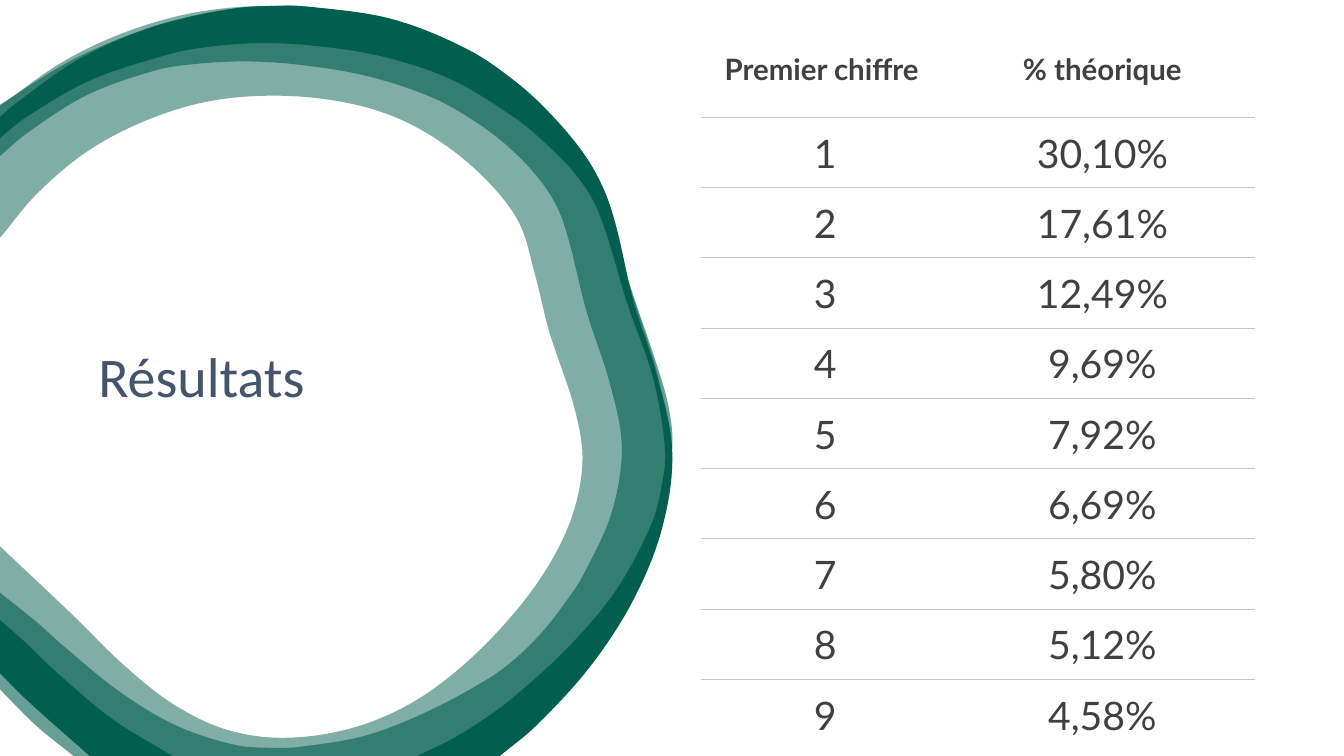
from itertools import islice
from math import dist

from lxml import etree
from pptx import Presentation
from pptx.dml.color import RGBColor
from pptx.enum.shapes import MSO_SHAPE
from pptx.enum.text import MSO_ANCHOR, PP_ALIGN
from pptx.oxml.ns import qn
from pptx.util import Cm, Pt

RECT = MSO_SHAPE.RECTANGLE
CENTER, LEFT = PP_ALIGN.CENTER, PP_ALIGN.LEFT
TOP, MIDDLE, BOTTOM = MSO_ANCHOR.TOP, MSO_ANCHOR.MIDDLE, MSO_ANCHOR.BOTTOM
COLORS = {"white": "FFFFFF", "green": "025E4F", "title": "44546A",
          "text": "404040", "rule": "C7C6C1"}
CM_PER_INCH = 2.54

WIDE_RING = [[
    [(0, 1.04), (0.69, 0.61), (1.41, 0.3), (1.99, 0.14), (2.38, 0.08),
     (2.68, 0.06), (2.98, 0.06), (3.78, 0.18), (4.53, 0.48), (4.87, 0.7),
     (5.17, 0.95), (5.46, 1.23), (5.72, 1.53), (5.94, 1.88), (6.05, 2.16),
     (6.18, 2.61), (6.29, 2.95), (6.52, 3.63), (6.63, 4.02), (6.67, 4.43),
     (6.53, 5.22), (6.19, 5.93), (5.71, 6.54), (5.2, 7.12), (4.8, 7.5)],
    [(0.73, 7.5), (0.36, 7.2), (0, 6.84)],
    [(0, 5.88), (0.35, 6.16), (0.62, 6.4), (1.17, 6.85), (1.73, 7.19),
     (2.33, 7.39), (2.72, 7.42), (2.97, 7.41), (3.62, 7.3), (4.24, 7.06),
     (4.85, 6.73), (5.13, 6.52), (5.38, 6.27), (5.6, 5.99), (5.79, 5.7),
     (6.07, 5.08), (6.17, 4.43), (6.05, 3.8), (5.82, 3.09), (5.64, 2.37),
     (5.53, 2.06), (5.36, 1.79), (5.07, 1.48), (4.72, 1.21), (4.27, 0.96),
     (3.62, 0.75), (2.94, 0.64), (2.41, 0.61), (1.89, 0.64), (1.54, 0.7),
     (0.87, 0.94), (0.27, 1.32), (0, 1.55)],
]]
PALE_RING = [[
    [(0, 1.05), (0.63, 0.61), (1.27, 0.31), (1.96, 0.12), (2.69, 0.06),
     (3.5, 0.13), (4.23, 0.33), (4.88, 0.67), (5.47, 1.17), (5.88, 1.68),
     (6.08, 2.18), (6.24, 2.81), (6.53, 3.74), (6.67, 4.58), (6.52, 5.37),
     (6.18, 6.09), (5.73, 6.71), (4.89, 7.5)],
    [(0.92, 7.5), (0.68, 7.3), (0, 6.64)],
    [(0, 5.42), (0.73, 6.11), (1.23, 6.6), (1.71, 6.98), (2.22, 7.23),
     (2.78, 7.32), (3.43, 7.24), (4.02, 7.01), (4.55, 6.64), (5.07, 6.12),
     (5.45, 5.6), (5.69, 5.08), (5.78, 4.55), (5.7, 4.05), (5.45, 3.29),
     (5.31, 2.73), (5.15, 2.21), (4.84, 1.8), (4.39, 1.42), (3.89, 1.15),
     (3.33, 1), (2.69, 0.95), (2.05, 1.01), (1.44, 1.2), (0.87, 1.5),
     (0.37, 1.92), (0, 2.36)],
]]
DARK_RING = [
    [[(0, 1.16), (0.14, 1.04), (0.78, 0.59), (1.51, 0.27), (2.29, 0.09),
      (2.69, 0.06), (3.09, 0.07), (3.89, 0.19), (4.64, 0.49), (5.14, 0.83),
      (5.5, 1.17), (5.81, 1.55), (6, 1.9), (6.12, 2.27), (6.29, 3.01),
      (6.52, 3.73), (6.67, 4.48), (6.57, 5.24), (6.28, 5.96), (5.85, 6.62),
      (5.32, 7.2), (4.96, 7.5)],
     [(4.14, 7.5), (4.47, 7.34), (4.78, 7.15), (5.08, 6.93), (5.63, 6.43),
      (6.11, 5.86), (6.46, 5.21), (6.56, 4.85), (6.6, 4.48), (6.48, 3.75),
      (6.23, 3.03), (6.01, 2.3), (5.87, 1.96), (5.66, 1.67), (5.4, 1.41),
      (5.11, 1.17), (4.48, 0.79), (3.79, 0.56), (3.07, 0.45), (2.51, 0.43),
      (1.96, 0.48), (1.6, 0.56), (0.89, 0.8), (0.25, 1.17), (0, 1.37)]],
    [[(0, 6.15), (0.27, 6.39), (0.54, 6.65), (1.11, 7.13), (1.71, 7.5)],
     [(0.89, 7.5), (0.26, 6.94), (0, 6.68)]],
]
RINGS = [(WIDE_RING, 60), (PALE_RING, 50), (DARK_RING, 100)]

ROWS = [("Premier chiffre ", "% théorique"), ("1", "30,10%"), ("2", "17,61%"),
        ("3", "12,49%"), ("4", "9,69%"), ("5", "7,92%"), ("6", "6,69%"),
        ("7", "5,80%"), ("8", "5,12%"), ("9", "4,58%")]


def rgb(name):
    return RGBColor.from_string(COLORS[name])


def write(tf, text, *, font, size, color, bold=False, align=LEFT, spacing=1.0):
    p = tf.paragraphs[0]
    p.alignment = align
    p.line_spacing = spacing
    r = p.add_run()
    r.text = text
    r.font.name = font
    r.font.size = Pt(size)
    r.font.bold = bold
    r.font.color.rgb = rgb(color)


def paint(sp, color, opacity=100):
    sp.shadow.inherit = False
    sp.fill.solid()
    sp.fill.fore_color.rgb = rgb(color)
    sp.line.fill.background()
    if opacity < 100:
        clr = sp.fill._xPr.find(qn("a:solidFill")).find(qn("a:srgbClr"))
        etree.SubElement(clr, qn("a:alpha"), val=str(opacity * 1000))


def handle(before, knot, after, toward):
    scale = dist(knot, toward) / 3 / (dist(before, knot) + dist(knot, after))
    sign = 1 if toward == after else -1
    return tuple(k + sign * scale * (a - b) for b, k, a in zip(before, knot, after))


def bend_segments(nodes):
    knots = [(int(n[0].get("x")), int(n[0].get("y"))) for n in nodes]
    padded = [knots[0], *knots, knots[-1]]
    for node, a, b, c, d in zip(nodes[1:], padded, padded[1:], padded[2:], padded[3:]):
        node_xml = etree.Element(qn("a:cubicBezTo"))
        for x, y in (handle(a, b, c, c), handle(b, c, d, b), c):
            etree.SubElement(node_xml, qn("a:pt"), x=str(round(x)), y=str(round(y)))
        node.getparent().replace(node, node_xml)


def add_ring(shapes, contours, opacity):
    builder = None
    for curves in contours:
        points = [(Cm(x * CM_PER_INCH), Cm(y * CM_PER_INCH))
                  for knots in curves for x, y in knots]
        if builder is None:
            builder = shapes.build_freeform(*points[0])
        else:
            builder.move_to(*points[0])
        builder.add_line_segments(points[1:], close=True)
    sp = builder.convert_to_shape()
    outline = next(sp._element.iter(qn("a:path")))
    nodes = iter([n for n in outline if n.tag != qn("a:close")])
    for curves in contours:
        for knots in curves:
            bend_segments(list(islice(nodes, len(knots))))
    paint(sp, "green", opacity)


def set_borders(cell, ruled_sides):
    tcPr = cell._tc.get_or_add_tcPr()
    for side in "LRTB":
        ln = etree.SubElement(tcPr, qn(f"a:ln{side}"), w=str(Pt(0.75)))
        if side in ruled_sides:
            fill = etree.SubElement(ln, qn("a:solidFill"))
            etree.SubElement(fill, qn("a:srgbClr"), val=COLORS["rule"])
        else:
            etree.SubElement(ln, qn("a:noFill"))


def add_results_table(slide):
    table = slide.shapes.add_table(len(ROWS), 2, Cm(17.66), Cm(0.51),
                                   Cm(13.97), Cm(18.37)).table
    table.first_row = table.horz_banding = False
    for column, width in zip(table.columns, (6.12, 7.85)):
        column.width = Cm(width)
    last = len(ROWS) - 1
    for i, values in enumerate(ROWS):
        header = i == 0
        table.rows[i].height = Cm(2.45 if header else 1.77)
        sides = ("T" if i > 0 else "") + ("B" if i < last else "")
        for j, value in enumerate(values):
            cell = table.cell(i, j)
            set_borders(cell, sides)
            cell.fill.background()
            cell.margin_left, cell.margin_right = Cm(0.58), Cm(0.43)
            cell.margin_top = cell.margin_bottom = Cm(0.28)
            cell.vertical_anchor = MIDDLE if header else BOTTOM
            write(cell.text_frame, value, font="Lato", size=21 if header else 28,
                  color="text", bold=header, align=CENTER)


def add_title(slide, text):
    tf = slide.shapes.add_textbox(Cm(2.23), Cm(8.67), Cm(10.16), Cm(4.95)).text_frame
    tf.word_wrap = True
    tf.vertical_anchor = TOP
    write(tf, text, font="Calibri", size=40, color="title", spacing=0.9)


def main():
    prs = Presentation()
    prs.slide_width, prs.slide_height = Cm(33.87), Cm(19.05)
    slide = prs.slides.add_slide(prs.slide_layouts[6])
    paint(slide.shapes.add_shape(RECT, 0, 0, prs.slide_width, Cm(19.02)), "white")
    group = slide.shapes.add_group_shape()
    for contours, opacity in RINGS:
        add_ring(group.shapes, contours, opacity)
    add_title(slide, "Résultats")
    add_results_table(slide)
    prs.save("out.pptx")


if __name__ == "__main__":
    main()
